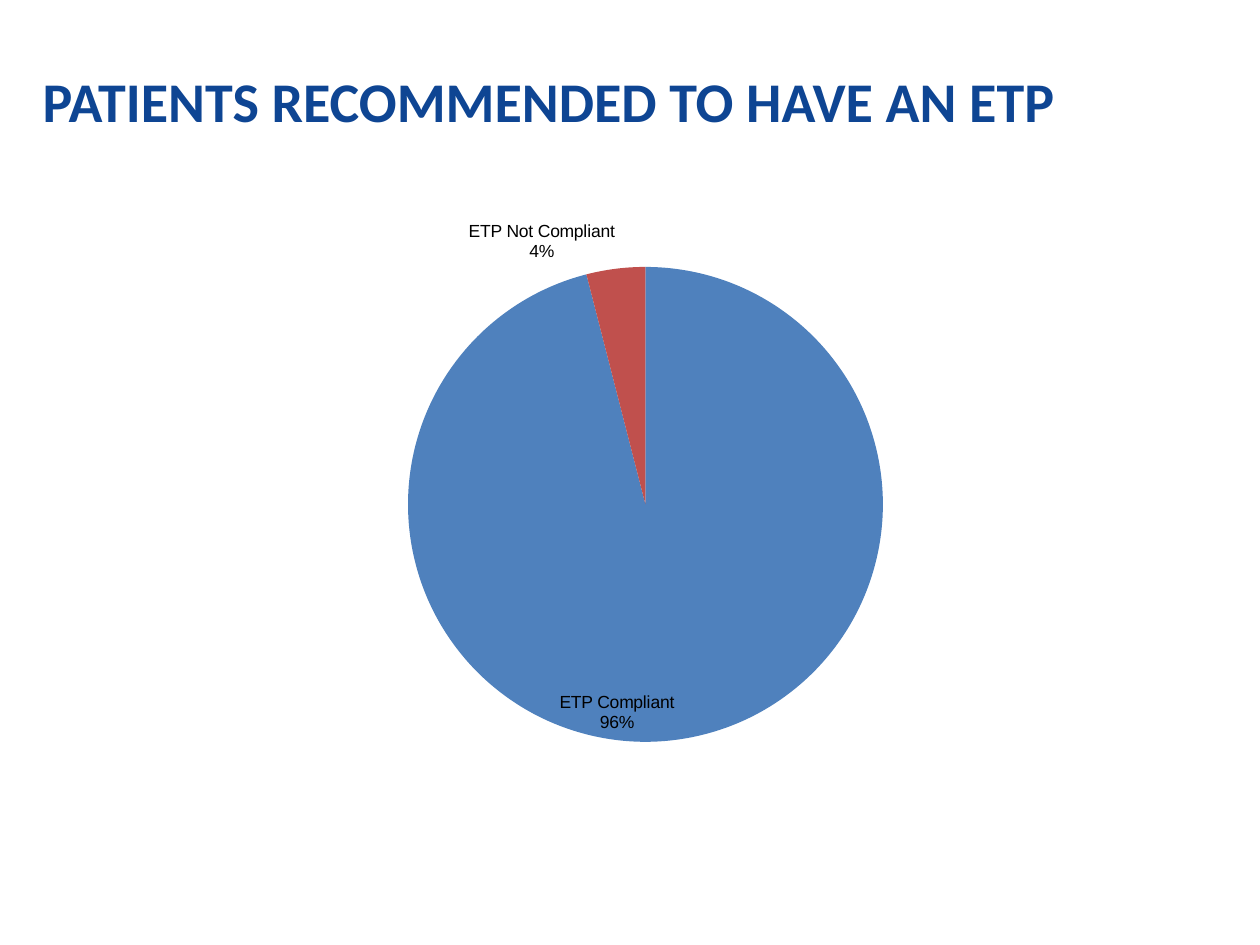
"""Build the slide on patients recommended to have an ETP."""
from lxml.etree import SubElement
from pptx import Presentation
from pptx.chart.data import CategoryChartData
from pptx.dml.color import RGBColor
from pptx.enum.chart import XL_CHART_TYPE as CHART, XL_LABEL_POSITION as LABEL
from pptx.enum.text import MSO_ANCHOR, PP_ALIGN
from pptx.oxml.ns import qn
from pptx.util import Emu, Pt

EMU_PER_PX = 914400 / 126
BLACK = RGBColor(0x00, 0x00, 0x00)
NAVY = RGBColor(0x0E, 0x45, 0x93)
BLUE = RGBColor(0x4F, 0x81, 0xBD)
RED = RGBColor(0xC0, 0x50, 0x4D)

TITLE_FONT = {"name": "Calibri", "size": Pt(32), "bold": True, "color": NAVY}
LABEL_FONT = {"name": "Arial", "size": Pt(10), "bold": False, "color": BLACK}
TITLE_BOX = (30, 45, 1187, 111)
CHART_BOX = (30, 204, 1187, 556)
PIE_BOX = (408, 267, 475, 475)
SLICES = [
    ("ETP Complient", 96, BLUE, "ETP Compliant\n96%", LABEL.INSIDE_END),
    ("ETP Not Complient", 4, RED, "ETP Not Compliant\n4%", LABEL.OUTSIDE_END),
]


def px(n):
    return Emu(round(n * EMU_PER_PX))


def format_font(font, style):
    for name, value in style.items():
        if name == "color":
            font.color.rgb = value
        else:
            setattr(font, name, value)


def add_title(s, text):
    sp = s.shapes.title
    sp.left, sp.top, sp.width, sp.height = map(px, TITLE_BOX)
    tf = sp.text_frame
    tf.text = text
    tf.word_wrap = True
    tf.vertical_anchor = MSO_ANCHOR.MIDDLE
    p = tf.paragraphs[0]
    p.alignment = PP_ALIGN.LEFT
    format_font(p.runs[0].font, TITLE_FONT)


def place_plot(chart):
    plot_area = chart.plots[0]._element.getparent()
    for old in plot_area.findall(qn("c:layout")):
        plot_area.remove(old)
    layout = SubElement(plot_area, qn("c:layout"))
    plot_area.insert(0, layout)
    manual = SubElement(layout, qn("c:manualLayout"))
    left, top, width, height = CHART_BOX
    x, y, w, h = PIE_BOX
    values = {
        "layoutTarget": "inner", "xMode": "edge", "yMode": "edge",
        "x": (x - left) / width, "y": (y - top) / height,
        "w": w / width, "h": h / height,
    }
    for name, value in values.items():
        SubElement(manual, qn(f"c:{name}")).set("val", str(value))


def label_point(point, text, position):
    label = point.data_label
    tf = label.text_frame
    tf.text = text
    for p in tf.paragraphs:
        format_font(p.runs[0].font, LABEL_FONT)
    label.position = position


def add_pie(s):
    data = CategoryChartData(number_format="0")
    data.categories = [row[0] for row in SLICES]
    data.add_series("Series 1", [row[1] for row in SLICES])
    chart = s.shapes.add_chart(CHART.PIE, *map(px, CHART_BOX), data).chart
    chart.has_title = chart.has_legend = False
    format_font(chart.font, LABEL_FONT)
    plot = chart.plots[0]
    plot.vary_by_categories = True
    labels = plot.series[0].data_labels
    settings = {
        "show_percentage": True, "show_category_name": True,
        "show_value": False, "number_format": "0%",
        "number_format_is_linked": False,
    }
    for name, value in settings.items():
        setattr(labels, name, value)
    for i, (_, _, color, text, position) in enumerate(SLICES):
        point = plot.series[0].points[i]
        point.format.fill.solid()
        point.format.fill.fore_color.rgb = color
        point.format.line.fill.background()
        label_point(point, text, position)
    place_plot(chart)


def main():
    prs = Presentation()
    prs.slide_width, prs.slide_height = px(1260), px(945)
    s = prs.slides.add_slide(prs.slide_layouts[5])
    add_title(s, "PATIENTS RECOMMENDED TO HAVE AN ETP")
    add_pie(s)
    prs.save("out.pptx")


if __name__ == "__main__":
    main()
